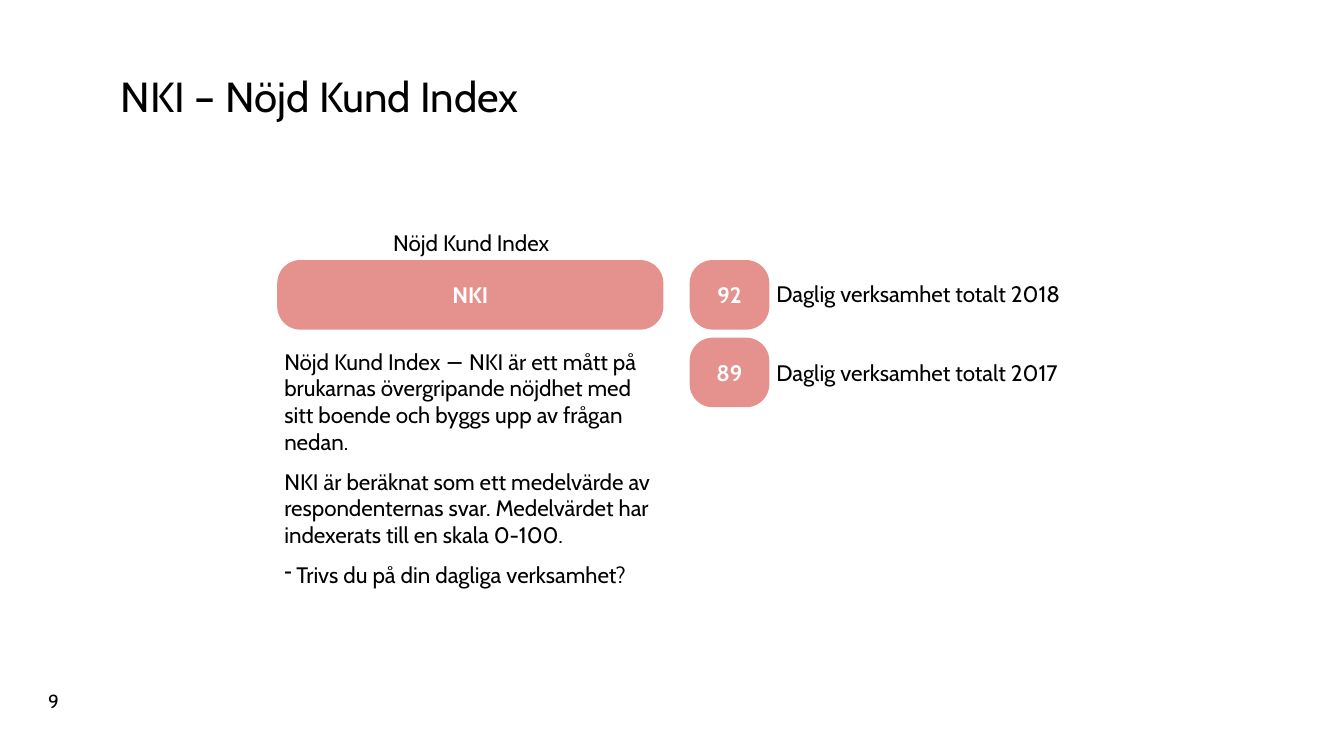
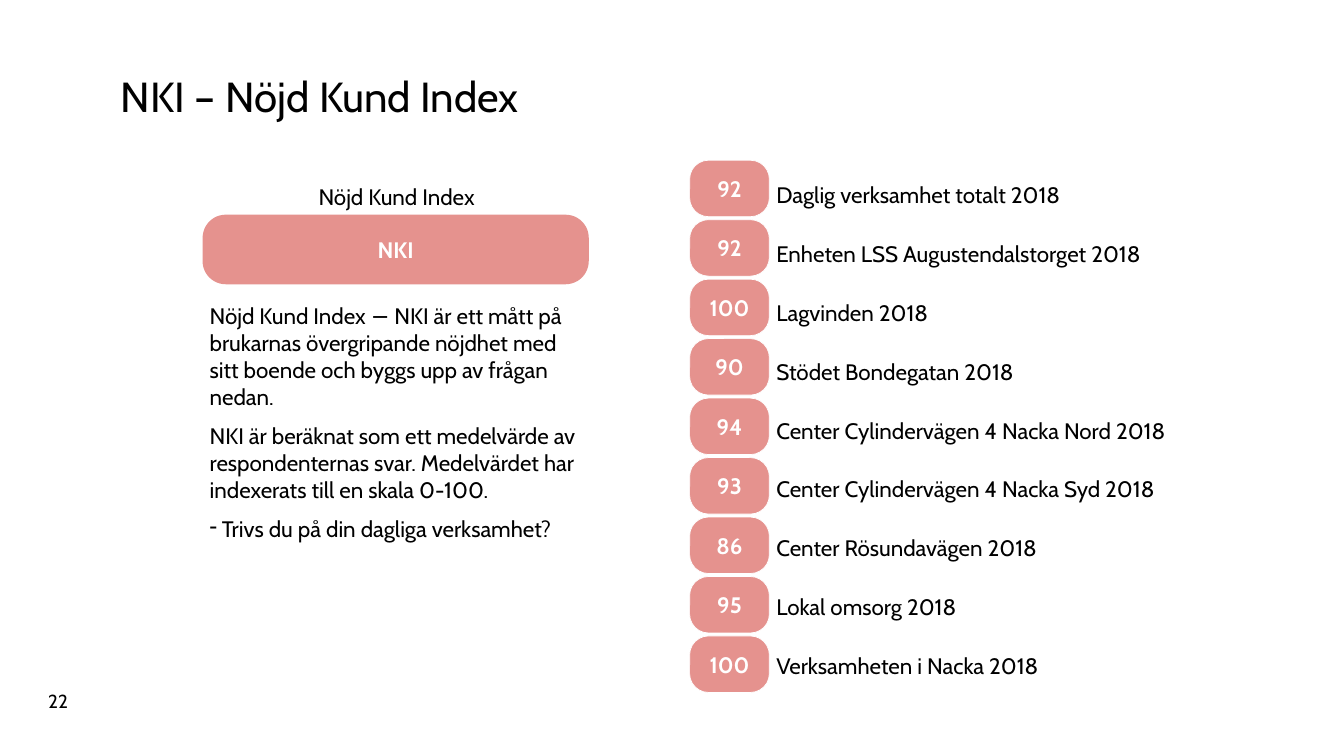
from lxml import etree
from pptx import Presentation
from pptx.dml.color import RGBColor
from pptx.enum.shapes import MSO_SHAPE
from pptx.enum.text import MSO_ANCHOR, PP_ALIGN
from pptx.oxml.ns import qn
from pptx.util import Inches, Pt

ROUNDED = MSO_SHAPE.ROUNDED_RECTANGLE
TOP, MIDDLE, BOTTOM = MSO_ANCHOR.TOP, MSO_ANCHOR.MIDDLE, MSO_ANCHOR.BOTTOM
LEFT, CENTER = PP_ALIGN.LEFT, PP_ALIGN.CENTER

TITLE = "NKI – Nöjd Kund Index"
EXPLANATION = [
    "Nöjd Kund Index − NKI är ett mått på brukarnas övergripande nöjdhet med "
    "sitt boende och byggs upp av frågan nedan.",
    "NKI är beräknat som ett medelvärde av respondenternas svar. Medelvärdet "
    "har indexerats till en skala 0-100.",
]
QUESTION = "Trivs du på din dagliga verksamhet?"
TOTALS = [
    ("92", "Daglig verksamhet totalt 2018"),
    ("89", "Daglig verksamhet totalt 2017"),
]
UNITS = [
    ("92", "Daglig verksamhet totalt 2018"),
    ("92", "Enheten LSS Augustendalstorget 2018"),
    ("100", "Lagvinden 2018"),
    ("90", "Stödet Bondegatan 2018"),
    ("94", "Center Cylindervägen 4 Nacka Nord 2018"),
    ("93", "Center Cylindervägen 4 Nacka Syd 2018"),
    ("86", "Center Rösundavägen 2018"),
    ("95", "Lokal omsorg 2018"),
    ("100", "Verksamheten i Nacka 2018"),
]


def color(value):
    return RGBColor.from_string(value)


class Deck:
    """Holds the shared style and the slide being built."""

    FONT = "Cabin"
    INK, WHITE, ROSE = "000000", "FFFFFF", "E5928E"
    BODY_SIZE = 16
    PARAGRAPH_GAP = 9
    BODY_INSETS = (0.07, 0.05, 0.05, 0.04)
    TITLE_INSETS = (0.1, 0.05, 0.1, 0.05)
    INDEX_WIDTH, INDEX_HEIGHT = 3.83, 0.69
    BADGE_LEFT, BADGE_WIDTH = 6.84, 0.79

    def __init__(self):
        self.presentation = Presentation()
        self.presentation.slide_width = Inches(13.33)
        self.presentation.slide_height = Inches(7.5)
        self.slide = None

    def add_slide(self, number):
        layout = self.presentation.slide_layouts[6]
        self.slide = self.presentation.slides.add_slide(layout)
        self.add_text(0.38, 6.79, 0.43, 0.33, [number], size=13.5,
                      insets=self.TITLE_INSETS, wrap=False)
        title = self.add_text(1.1, 0.63, 11.38, 0.63, [TITLE], size=30,
                              insets=self.TITLE_INSETS, anchor=BOTTOM)
        title.paragraphs[0].line_spacing = 0.9

    def format_paragraph(self, paragraph, size, ink, align=LEFT, bold=False):
        paragraph.alignment = align
        for run in paragraph.runs:
            run.font.name = self.FONT
            run.font.size = Pt(size)
            run.font.bold = bold
            run.font.color.rgb = color(ink)

    def add_text(self, left, top, width, height, lines, size=BODY_SIZE,
                 insets=BODY_INSETS, anchor=TOP, align=LEFT, wrap=True,
                 gap=PARAGRAPH_GAP):
        box = self.slide.shapes.add_textbox(
            Inches(left), Inches(top), Inches(width), Inches(height))
        frame = box.text_frame
        frame.word_wrap = wrap
        frame.vertical_anchor = anchor
        (frame.margin_left, frame.margin_top,
         frame.margin_right, frame.margin_bottom) = map(Inches, insets)
        frame.text = "\n".join(lines)
        for index, paragraph in enumerate(frame.paragraphs):
            if index:
                paragraph.space_before = Pt(gap)
            self.format_paragraph(paragraph, size, self.INK, align)
        return frame

    def add_dash(self, paragraph):
        """Give the paragraph a hanging dash bullet."""
        properties = paragraph._p.get_or_add_pPr()
        properties.set("marL", str(Inches(0.12)))
        properties.set("indent", str(-Inches(0.12)))
        bullet = etree.SubElement(properties, qn("a:buChar"))
        bullet.set("char", "-")

    def add_pill(self, left, top, width, height, text, outlined=False):
        pill = self.slide.shapes.add_shape(
            ROUNDED, Inches(left), Inches(top), Inches(width), Inches(height))
        pill.adjustments[0] = 0.333
        pill.shadow.inherit = False
        pill.fill.solid()
        pill.fill.fore_color.rgb = color(self.ROSE)
        if outlined:
            pill.line.color.rgb = color(self.WHITE)
            pill.line.width = Pt(0.5)
        else:
            pill.line.fill.background()
        frame = pill.text_frame
        frame.vertical_anchor = MIDDLE
        frame.text = text
        self.format_paragraph(frame.paragraphs[0], self.BODY_SIZE, self.WHITE,
                              CENTER, bold=True)

    def add_index_panel(self, left, top):
        """Heading, NKI bar and the explanation below it."""
        self.add_text(left, top, self.INDEX_WIDTH, 0.36, ["Nöjd Kund Index"],
                      align=CENTER)
        self.add_pill(left, top + 0.36, self.INDEX_WIDTH, self.INDEX_HEIGHT,
                      "NKI")
        frame = self.add_text(left, top + 1.18, self.INDEX_WIDTH, 2.86,
                              EXPLANATION + [QUESTION])
        self.add_dash(frame.paragraphs[-1])

    def add_scores(self, scores, top, pitch, height, outlined=False):
        for row, (score, _) in enumerate(scores):
            self.add_pill(self.BADGE_LEFT, top + row * pitch, self.BADGE_WIDTH,
                          height, score, outlined)

    def add_labels(self, scores, top, height, gap, line_height=None):
        frame = self.add_text(self.BADGE_LEFT + self.BADGE_WIDTH, top, 4.19,
                              height, [label for _, label in scores], gap=gap)
        if line_height:
            for paragraph in frame.paragraphs:
                paragraph.line_spacing = Pt(line_height)


def main():
    deck = Deck()

    deck.add_slide("9")
    deck.add_index_panel(2.75, 2.22)
    deck.add_scores(TOTALS, top=2.58, pitch=0.77, height=0.69)
    deck.add_labels(TOTALS, top=2.73, height=4.04, gap=37.5)

    deck.add_slide("22")
    deck.add_index_panel(2.01, 1.77)
    deck.add_scores(UNITS, top=1.59, pitch=0.59, height=0.56, outlined=True)
    deck.add_labels(UNITS, top=1.56, height=5.27, gap=9, line_height=33)

    deck.presentation.save("out.pptx")


if __name__ == "__main__":
    main()
